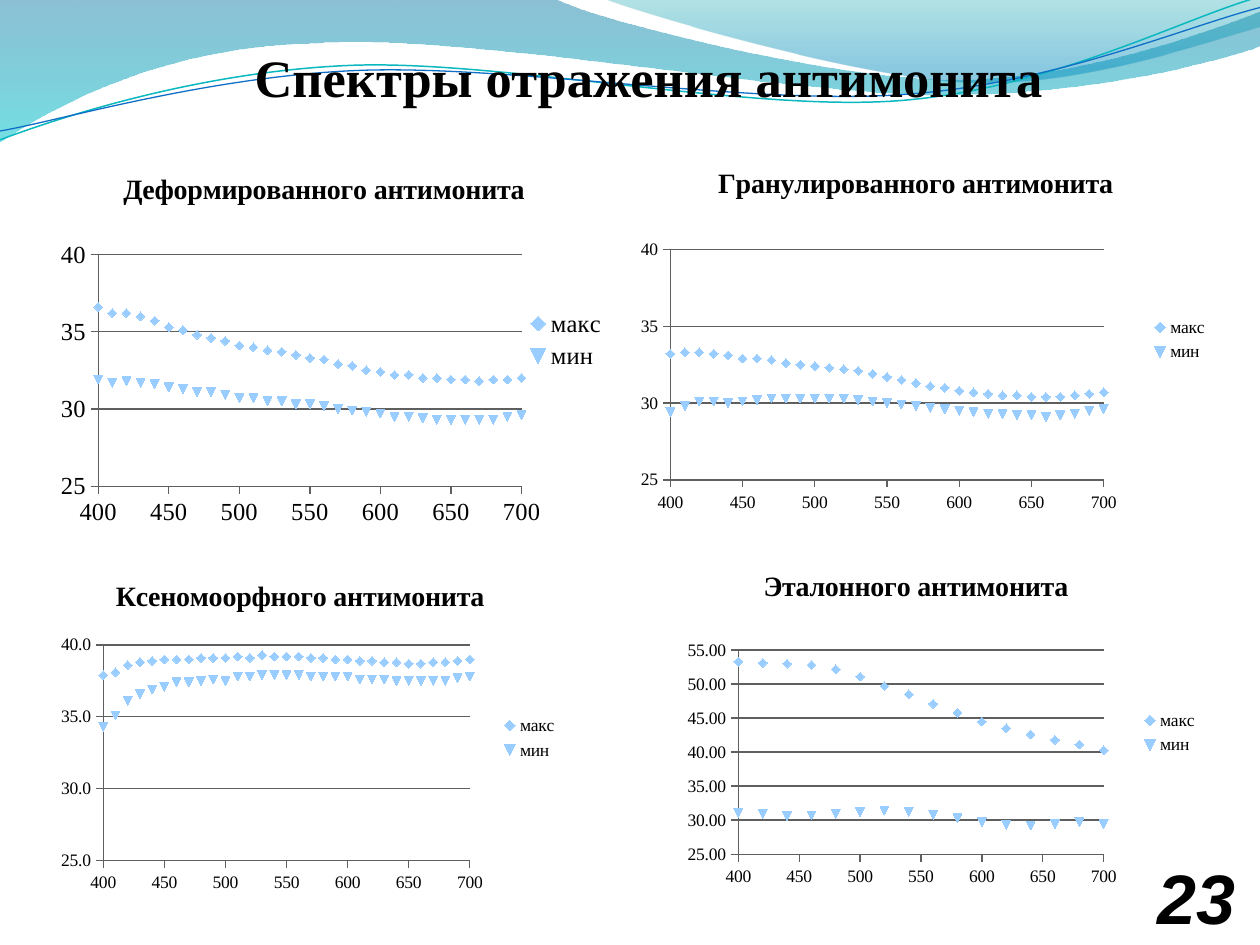
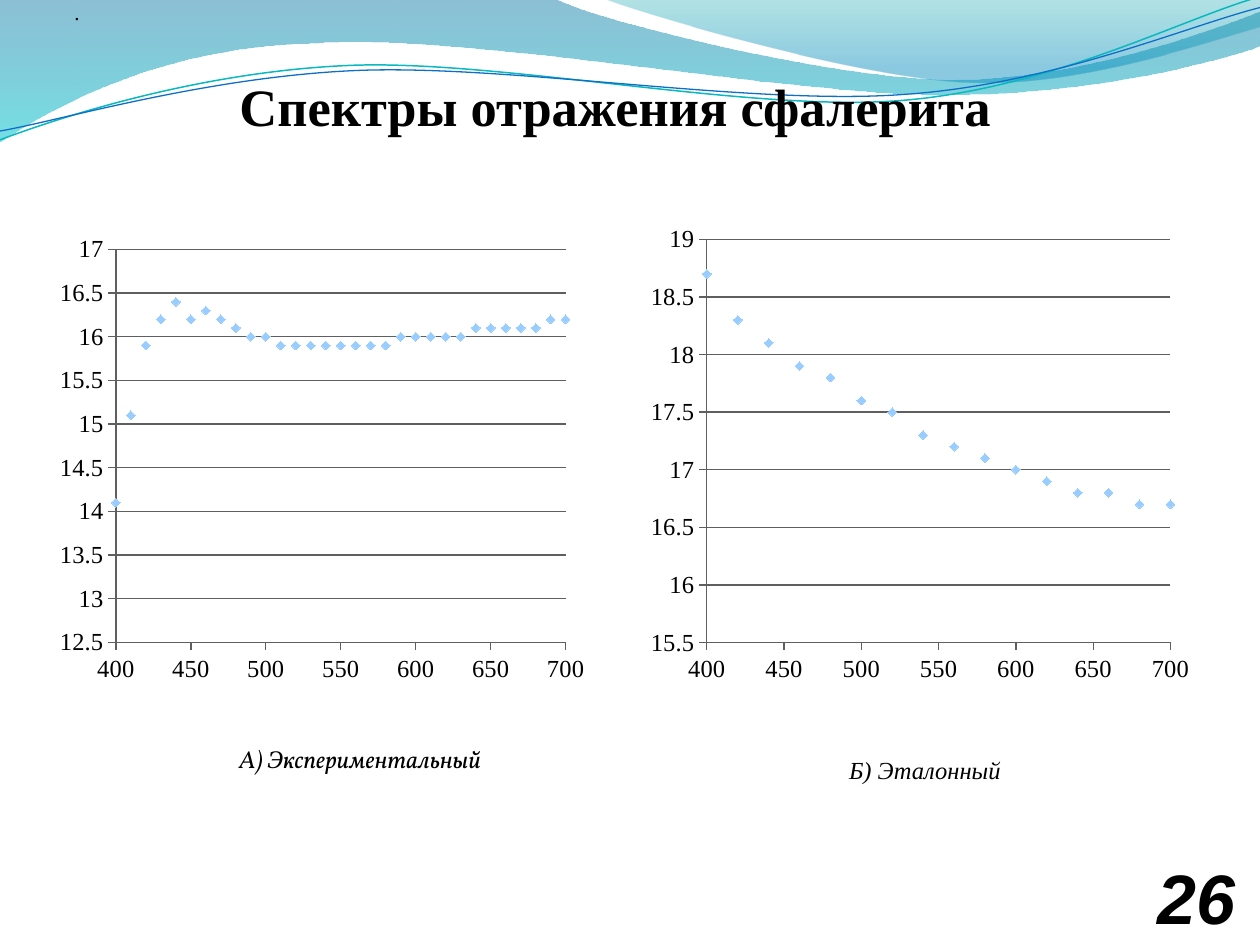
from lxml import etree
from pptx import Presentation
from pptx.chart.data import XyChartData
from pptx.dml.color import RGBColor
from pptx.enum import chart as ch, shapes, text
from pptx.oxml.ns import qn
from pptx.util import Inches, Pt

BLACK = RGBColor(0x00, 0x00, 0x00)
WHITE = RGBColor(0xFF, 0xFF, 0xFF)
GRAY = RGBColor(0x5F, 0x5F, 0x5F)
MARKER = RGBColor(0x99, 0xCC, 0xFF)
DEEP_BLUE = RGBColor(0x00, 0x74, 0xA1)
CYAN = RGBColor(0x00, 0xC6, 0xCF)
TEAL = RGBColor(0x00, 0xA1, 0xA9)
SKY = RGBColor(0x00, 0x8B, 0xBF)
TEAL_LINE = RGBColor(0x0A, 0xB8, 0xBF)
BLUE_LINE = RGBColor(0x0F, 0x6F, 0xC6)
SERIF = "Times New Roman"

# Each outline: start point, then lines (one point) and Bézier curves (three points).
BAND = [(0, 0), [(4.4, -0.01)],
        [(4.76, 0.17), (6.64, 0.63), (7.58, 0.63)],
        [(8.53, 0.63), (9.58, 0.26), (10, 0.09)], [(10.01, 0.36)],
        [(9.83, 0.44), (8.7, 0.76), (7.46, 0.75)],
        [(6.22, 0.75), (3.82, 0.28), (2.57, 0.34)],
        [(1.29, 0.36), (0.46, 0.83), (-0.01, 1.13)], [(0, 0)]]
CORNER = [(4.79, -0.01), [(5.09, 0.11), (6.82, 0.62), (7.69, 0.65)],
          [(8.56, 0.69), (9.61, 0.32), (10, 0.21)], [(10, 0)],
          [(4.79, -0.01)]]
TEAL_WAVE = [(0, 1.11), [(0.48, 0.93), (1.58, 0.57), (2.77, 0.52)],
             [(3.95, 0.47), (5.93, 0.89), (7.13, 0.8)],
             [(8.33, 0.71), (9.38, 0.15), (9.98, -0.02)]]
BLUE_WAVE = [(0, 1.04), [(0.47, 0.96), (1.64, 0.61), (2.83, 0.56)],
             [(4.03, 0.51), (5.97, 0.84), (7.17, 0.75)],
             [(8.36, 0.67), (9.41, 0.21), (10, 0.06)]]

DEFORMED = {
    "макс": [36.6, 36.2, 36.2, 36, 35.7, 35.3, 35.1, 34.8, 34.6, 34.4, 34.1,
             34, 33.8, 33.7, 33.5, 33.3, 33.2, 32.9, 32.8, 32.5, 32.4, 32.2,
             32.2, 32, 32, 31.9, 31.9, 31.8, 31.9, 31.9, 32],
    "мин": [31.9, 31.7, 31.8, 31.7, 31.6, 31.4, 31.3, 31.1, 31.1, 30.9, 30.7,
            30.7, 30.5, 30.5, 30.3, 30.3, 30.2, 30, 29.9, 29.8, 29.7, 29.5,
            29.5, 29.4, 29.3, 29.3, 29.3, 29.3, 29.3, 29.5, 29.6]}
GRANULATED = {
    "макс": [33.2, 33.3, 33.3, 33.2, 33.1, 32.9, 32.9, 32.8, 32.6, 32.5, 32.4,
             32.3, 32.2, 32.1, 31.9, 31.7, 31.5, 31.3, 31.1, 31, 30.8, 30.7,
             30.6, 30.5, 30.5, 30.4, 30.4, 30.4, 30.5, 30.6, 30.7],
    "мин": [29.4, 29.8, 30.1, 30.1, 30, 30.1, 30.2, 30.3, 30.3, 30.3, 30.3,
            30.3, 30.3, 30.2, 30.1, 30, 29.9, 29.8, 29.7, 29.6, 29.5, 29.4,
            29.3, 29.3, 29.2, 29.2, 29.1, 29.2, 29.3, 29.5, 29.6]}
XENOMORPHIC = {
    "макс": [37.9, 38.1, 38.6, 38.8, 38.9, 39, 39, 39, 39.1, 39.1, 39.1, 39.2,
             39.1, 39.3, 39.2, 39.2, 39.2, 39.1, 39.1, 39, 39, 38.9, 38.9,
             38.8, 38.8, 38.7, 38.7, 38.8, 38.8, 38.9, 39],
    "мин": [34.3, 35.1, 36.1, 36.6, 36.9, 37.1, 37.4, 37.4, 37.5, 37.6, 37.5,
            37.8, 37.8, 37.9, 37.9, 37.9, 37.9, 37.8, 37.8, 37.8, 37.8, 37.6,
            37.6, 37.6, 37.5, 37.5, 37.5, 37.5, 37.5, 37.7, 37.8]}
REFERENCE = {
    "макс": [53.3, 53.1, 53, 52.8, 52.2, 51.1, 49.7, 48.5, 47.1, 45.8, 44.5,
             43.5, 42.6, 41.8, 41.1, 40.3],
    "мин": [31.1, 30.9, 30.6, 30.7, 30.9, 31.2, 31.4, 31.2, 30.8, 30.3, 29.7,
            29.3, 29.2, 29.4, 29.7, 29.4]}
SPHALERITE = {
    "Series 1": [14.1, 15.1, 15.9, 16.2, 16.4, 16.2, 16.3, 16.2, 16.1, 16, 16,
                 15.9, 15.9, 15.9, 15.9, 15.9, 15.9, 15.9, 15.9, 16, 16, 16,
                 16, 16, 16.1, 16.1, 16.1, 16.1, 16.1, 16.2, 16.2]}
# Measured at every second wavelength of the shared scale.
SPHALERITE_REFERENCE = {
    "Series 1": [18.7, None, 18.3, None, 18.1, None, 17.9, None, 17.8, None,
                 17.6, None, 17.5, None, 17.3, None, 17.2, None, 17.1, None,
                 17, None, 16.9, None, 16.8, None, 16.8, None, 16.7, None,
                 16.7]}


def add_outline(slide, outline, closed):
    """Build a freeform through the segment ends, then bend the curved ones."""
    ends = [outline[0]] + [seg[-1] for seg in outline[1:]]
    pts = [(Inches(x), Inches(y)) for x, y in ends]
    builder = slide.shapes.build_freeform(*pts[0])
    builder.add_line_segments(pts[1:], close=closed)
    sp = builder.convert_to_shape()
    sp.shadow.inherit = False
    lines = list(sp._element.iter(qn("a:lnTo")))
    for line, seg in zip(lines, outline[1:]):
        if len(seg) == 3:
            curve = etree.Element(qn("a:cubicBezTo"))
            for x, y in seg:
                etree.SubElement(curve, qn("a:pt"), x=str(Inches(x) - sp.left),
                                 y=str(Inches(y) - sp.top))
            line.getparent().replace(line, curve)
    return sp


def add_band(slide, outline, stops):
    """stops: (position, colour, opacity in percent) from top to bottom."""
    sp = add_outline(slide, outline, True)
    sp.line.fill.background()
    sp.fill.gradient()
    sp.fill.gradient_angle = 270
    for stop, (position, color, _) in zip(sp.fill.gradient_stops, stops):
        stop.position = position
        stop.color.rgb = color
    for clr, (_, _, opacity) in zip(sp._element.iter(qn("a:srgbClr")), stops):
        etree.SubElement(clr, qn("a:alpha"), val=str(opacity * 1000))
    return sp


def add_wave(slide, outline, color, width):
    sp = add_outline(slide, outline, False)
    sp.fill.background()
    sp.line.color.rgb = color
    sp.line.width = Pt(width)
    return sp


def decorate_master(prs, slide):
    """Draw the bands and waves, then move them behind everything on the master."""
    tree = prs.slide_master.shapes._spTree
    waves = [add_band(slide, BAND, [(0, DEEP_BLUE, 45), (1, CYAN, 55)]),
             add_band(slide, CORNER, [(0, TEAL, 30), (0.8, SKY, 45)]),
             add_wave(slide, TEAL_WAVE, TEAL_LINE, 0.85),
             add_wave(slide, BLUE_WAVE, BLUE_LINE, 0.75)]
    for i, sp in enumerate(waves):
        tree.insert(2 + i, sp._element)


def style_font(font, size, name=SERIF, bold=False, italic=False):
    font.size, font.name = Pt(size), name
    font.bold, font.italic = bold, italic
    font.color.rgb = BLACK


def set_title(slide, title, box):
    sp = slide.shapes.title
    sp.left, sp.top, sp.width, sp.height = map(Inches, box)
    tf = sp.text_frame
    tf.text = title
    tf.auto_size = text.MSO_AUTO_SIZE.NONE
    tf.word_wrap = False
    tf.vertical_anchor = text.MSO_ANCHOR.TOP
    p = tf.paragraphs[0]
    p.alignment = text.PP_ALIGN.LEFT
    style_font(p.runs[0].font, 30, bold=True)


def add_label(slide, label, box, size, font=SERIF, italic=True, inset=0.1):
    sp = slide.shapes.add_textbox(*map(Inches, box))
    tf = sp.text_frame
    tf.text = label
    tf.margin_left = Inches(inset)
    style_font(tf.paragraphs[0].runs[0].font, size, font, italic=italic)


def add_page_number(slide, number):
    sp = slide.shapes.add_shape(shapes.MSO_SHAPE.RECTANGLE,
                                *map(Inches, (9.09, 6.73, 0.91, 0.77)))
    sp.shadow.inherit = False
    sp.fill.solid()
    sp.fill.fore_color.rgb = WHITE
    sp.line.fill.background()
    tf = sp.text_frame
    tf.text = str(number)
    tf.vertical_anchor = text.MSO_ANCHOR.TOP
    p = tf.paragraphs[0]
    p.alignment = text.PP_ALIGN.JUSTIFY
    style_font(p.runs[0].font, 40, "Arial", bold=True, italic=True)


def set_layout(element, frame, spot):
    """Fix a chart part at a spot (left, top[, width, height]) in slide inches."""
    left, top, width, height = frame
    parts = [("x", (spot[0] - left) / width), ("y", (spot[1] - top) / height)]
    layout = etree.Element(qn("c:layout"))
    manual = etree.SubElement(layout, qn("c:manualLayout"))
    if len(spot) == 4:
        etree.SubElement(manual, qn("c:layoutTarget"), val="inner")
        parts += [("w", spot[2] / width), ("h", spot[3] / height)]
    for key in ("xMode", "yMode"):
        etree.SubElement(manual, qn("c:" + key), val="edge")
    for key, value in parts:
        etree.SubElement(manual, qn("c:" + key), val=f"{value:.4f}")
    old = element.find(qn("c:layout"))
    overlay = element.find(qn("c:overlay"))
    if old is not None:
        element.replace(old, layout)
    elif overlay is not None:
        overlay.addprevious(layout)
    else:
        element.insert(0, layout)


def style_axis(axis, scale, number_format="General"):
    """scale: (low, high, step), or empty for an automatic one."""
    if scale:
        axis.minimum_scale, axis.maximum_scale, axis.major_unit = scale
    axis.major_tick_mark = ch.XL_TICK_MARK.OUTSIDE
    axis.minor_tick_mark = ch.XL_TICK_MARK.NONE
    axis.tick_labels.number_format = number_format
    axis.tick_labels.number_format_is_linked = False
    axis.format.line.color.rgb = GRAY
    axis.format.line.width = Pt(0.75)


def drop_empty_points(chart):
    for pt in list(chart._chartSpace.iter(qn("c:pt"))):
        if pt.findtext(qn("c:v")) in ("None", ""):
            pt.getparent().remove(pt)


def add_spectrum(slide, spectra, frame, plot, y_scale, size, x_step=10,
                 number_format="General", title=None, title_at=None,
                 legend_at=None):
    """Scatter chart of reflectance against wavelength, 400 to 700."""
    data = XyChartData()
    for name, values in spectra.items():
        series = data.add_series(name)
        for x, y in zip(range(400, 701, x_step), values):
            series.add_data_point(x, y)
    chart = slide.shapes.add_chart(ch.XL_CHART_TYPE.XY_SCATTER,
                                   *map(Inches, frame), data).chart
    drop_empty_points(chart)
    style_font(chart.font, size)
    style_axis(chart.category_axis, (400, 700, 50))
    style_axis(chart.value_axis, y_scale, number_format)
    chart.category_axis.has_major_gridlines = False
    chart.value_axis.has_major_gridlines = True
    grid = chart.value_axis.major_gridlines.format.line
    grid.color.rgb, grid.width = GRAY, Pt(0.75)
    chart.plots[0].vary_by_categories = False
    for s in chart.plots[0].series:
        s.format.line.fill.background()
        s.marker.style = ch.XL_MARKER_STYLE.AUTOMATIC
        s.marker.size = 5
        s.marker.format.fill.solid()
        s.marker.format.fill.fore_color.rgb = MARKER
        s.marker.format.line.fill.background()
    set_layout(chart._chartSpace.chart.plotArea, frame, plot)
    chart.has_title = title is not None
    chart.has_legend = legend_at is not None
    if title:
        tf = chart.chart_title.text_frame
        tf.text = title
        style_font(tf.paragraphs[0].runs[0].font, 16, bold=True)
        set_layout(chart.chart_title._element, frame, title_at)
    if legend_at:
        chart.legend.position = ch.XL_LEGEND_POSITION.RIGHT
        chart.legend.include_in_layout = False
        set_layout(chart.legend._element, frame, legend_at)


def add_antimonite_slide(slide):
    set_title(slide, "Спектры отражения антимонита", (1.92, 0.31, 6.52, 0.61))
    add_page_number(slide, 23)
    add_spectrum(slide, DEFORMED, (0.31, 1.09, 4.61, 3.21),
                 (0.78, 2.02, 3.36, 1.84), (25, 40, 5), 14,
                 title="Деформированного антимонита", title_at=(0.94, 1.32),
                 legend_at=(4.15, 2.42))
    add_spectrum(slide, REFERENCE, (4.92, 4.38, 4.69, 2.89),
                 (5.86, 5.16, 2.9, 1.62), (25, 55, 5), 10, 20, "0.00",
                 "Эталонного антимонита", (6.02, 4.47), (9.04, 5.6))
    add_spectrum(slide, XENOMORPHIC, (0.23, 4.45, 4.3, 2.81),
                 (0.82, 5.12, 2.91, 1.71), (25, 40, 5), 10, 10, "0.0",
                 "Ксеномоорфного антимонита", (0.88, 4.55), (3.96, 5.64))
    add_spectrum(slide, GRANULATED, (4.84, 1.17, 4.84, 3.05),
                 (5.32, 1.98, 3.44, 1.83), (25, 40, 5), 10,
                 title="Гранулированного антимонита", title_at=(5.66, 1.27),
                 legend_at=(9.12, 2.48))


def add_sphalerite_slide(slide):
    set_title(slide, "Спектры отражения сфалерита", (1.8, 0.54, 6.41, 0.5))
    add_label(slide, ".", (0, -0.05, 0.74, 0.61), 12, italic=False, inset=0.59)
    add_label(slide, "А) Экспериментальный", (1.8, 5.86, 2.33, 0.34), 14, "Vollkorn")
    add_label(slide, "Б) Эталонный", (6.64, 5.94, 1.47, 0.34), 14)
    add_spectrum(slide, SPHALERITE_REFERENCE, (5.08, 1.72, 4.45, 3.77),
                 (5.61, 1.9, 3.68, 3.2), (), 14)
    add_spectrum(slide, SPHALERITE, (0.39, 1.8, 4.33, 3.69),
                 (0.92, 1.98, 3.57, 3.12), (), 14)
    add_page_number(slide, 26)


def main():
    prs = Presentation()
    prs.slide_width, prs.slide_height = Inches(10), Inches(7.5)
    title_only = prs.slide_layouts[5]
    first, second = (prs.slides.add_slide(title_only) for _ in range(2))
    decorate_master(prs, first)
    add_antimonite_slide(first)
    add_sphalerite_slide(second)
    prs.save("out.pptx")


if __name__ == "__main__":
    main()
